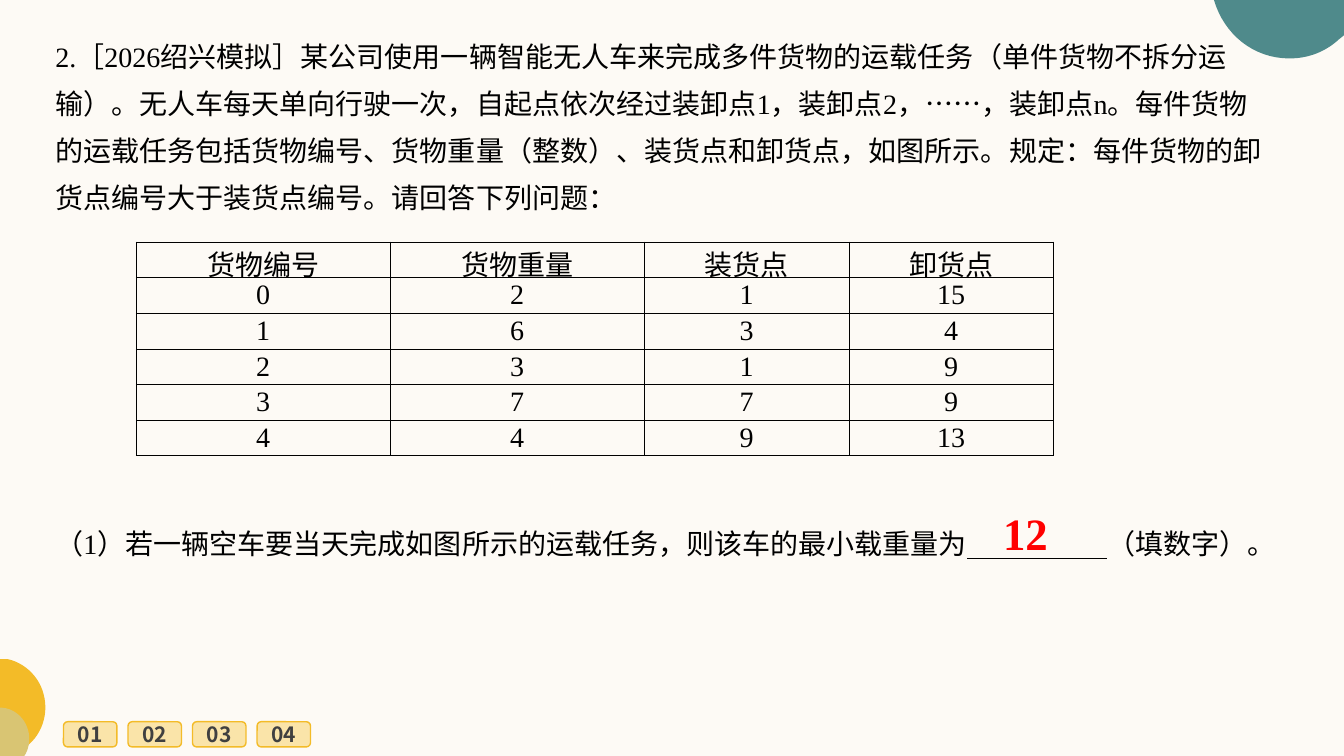
from lxml.etree import SubElement
from pptx import Presentation
from pptx.dml.color import RGBColor
from pptx.enum.shapes import MSO_SHAPE
from pptx.enum.text import MSO_ANCHOR, MSO_AUTO_SIZE, PP_ALIGN
from pptx.oxml.ns import qn
from pptx.util import Inches, Pt

SERIF, SANS = "Times New Roman", "Noto Sans CJK SC"
BLACK, RED, GREY = "000000", "FF0000", "404040"
CREAM, YELLOW, PALE_YELLOW = "FDFAF5", "F3BB28", "FAE4A9"
KHAKI, TEAL = "D9C573", "4F8A8B"
SLIDE_WIDTH, SLIDE_HEIGHT = 13.33, 7.5
INTRODUCTION = (
    "2.［2026绍兴模拟］某公司使用一辆智能无人车来完成多件货物的运载任务（单件货物不拆分运输）。"
    "无人车每天单向行驶一次，自起点依次经过装卸点1，装卸点2，……，装卸点n。"
    "每件货物的运载任务包括货物编号、货物重量（整数）、装货点和卸货点，如图所示。"
    "规定：每件货物的卸货点编号大于装货点编号。请回答下列问题："
)
QUESTION = ("（1）若一辆空车要当天完成如图所示的运载任务，则该车的最小载重量为", "　" * 5, "（填数字）。")
ANSWER = "12"
CARGO = [
    ("货物编号", "货物重量", "装货点", "卸货点"),
    (0, 2, 1, 15),
    (1, 6, 3, 4),
    (2, 3, 1, 9),
    (3, 7, 7, 9),
    (4, 4, 9, 13),
]
COLUMN_WIDTHS = (2.52, 2.52, 2.03, 2.03)
TABLE_HEIGHT = 2.09
PAGE_BUTTONS = ("01", "02", "03", "04")
CORNERS = [
    (YELLOW, [(0.45, 7.02), (0.45, 7.25, 0.29, 7.45, 0.08, 7.49), (0, 7.5), (0, 6.54),
              (0.08, 6.54), (0.29, 6.59, 0.45, 6.78, 0.45, 7.02)]),
    (KHAKI, [(0.29, 7.33), (0.29, 7.16, 0.16, 7.02, 0, 7.02), (0, 7.64),
             (0.16, 7.64, 0.29, 7.5, 0.29, 7.33)]),
    (TEAL, [(12.79, 0.58), (12.98, 0.58, 13.15, 0.51, 13.28, 0.39), (13.33, 0.35),
            (13.33, 0), (12.04, 0), (12.14, 0.34, 12.43, 0.58, 12.79, 0.58)]),
]
CURVE_STEPS = 16


def color(hex_string):
    """Turn a hex string into a colour."""
    return RGBColor.from_string(hex_string)


def paint(fill, hex_string):
    """Give a fill one solid colour."""
    fill.solid()
    fill.fore_color.rgb = color(hex_string)


def format_runs(paragraph, size, name, hex_string, bold=False):
    """Set the font of every run in a paragraph."""
    for run in paragraph.runs:
        run.font.size = Pt(size)
        run.font.name = name
        run.font.bold = bold
        run.font.color.rgb = color(hex_string)


def outline_points(path):
    """Follow straight and cubic segments and return the points passed."""
    points = [path[0]]
    for segment in path[1:]:
        if len(segment) == 2:
            points.append(segment)
            continue
        start = points[-1]
        for step in range(1, CURVE_STEPS + 1):
            t = step / CURVE_STEPS
            weights = ((1 - t) ** 3, 3 * t * (1 - t) ** 2, 3 * t * t * (1 - t), t ** 3)
            points.append(tuple(
                sum(weight * value for weight, value in zip(weights, (start[axis], *segment[axis::2])))
                for axis in (0, 1)))
    return points


def add_corner(slide, hex_string, path):
    """Draw one rounded corner decoration, cut off at the slide's bottom edge."""
    points = [(Inches(x), Inches(min(y, SLIDE_HEIGHT))) for x, y in outline_points(path)]
    builder = slide.shapes.build_freeform(*points[0])
    builder.add_line_segments(points[1:], close=True)
    shape = builder.convert_to_shape()
    shape.shadow.inherit = False
    paint(shape.fill, hex_string)
    shape.line.fill.background()


def add_page_button(slide, index, label):
    """Draw one numbered button of the bottom row."""
    shape = slide.shapes.add_shape(
        MSO_SHAPE.ROUNDED_RECTANGLE, Inches(0.63 + 0.64 * index), Inches(7.16), Inches(0.53), Inches(0.25))
    shape.shadow.inherit = False
    paint(shape.fill, PALE_YELLOW)
    shape.line.color.rgb = color(YELLOW)
    shape.line.width = Pt(1)
    text_frame = shape.text_frame
    text_frame.text = label
    text_frame.vertical_anchor = MSO_ANCHOR.MIDDLE
    text_frame.paragraphs[0].alignment = PP_ALIGN.CENTER
    format_runs(text_frame.paragraphs[0], 15, SANS, GREY, bold=True)


def add_text(slide, box, texts, size=20, hex_string=BLACK, bold=False, spacing=1.4):
    """Add a one-paragraph text box and return its paragraph."""
    text_frame = slide.shapes.add_textbox(*map(Inches, box)).text_frame
    text_frame.word_wrap = True
    text_frame.auto_size = MSO_AUTO_SIZE.SHAPE_TO_FIT_TEXT
    paragraph = text_frame.paragraphs[0]
    paragraph.line_spacing = spacing
    for text in texts:
        paragraph.add_run().text = text
    format_runs(paragraph, size, SERIF, hex_string, bold)
    return paragraph


def set_borders(cell, outer_sides):
    """Line a cell, with a heavier line on the table's outer sides."""
    properties = cell._tc.get_or_add_tcPr()
    for position, side in enumerate("LRTB"):
        width = Pt(0.5 if side in outer_sides else 0.25)
        line = properties.makeelement(qn(f"a:ln{side}"), {"w": str(width)})
        fill = SubElement(line, qn("a:solidFill"))
        SubElement(fill, qn("a:srgbClr"), {"val": BLACK})
        properties.insert(position, line)


def add_cargo_table(slide):
    """Add the table of cargo tasks."""
    row_count, column_count = len(CARGO), len(COLUMN_WIDTHS)
    table = slide.shapes.add_table(
        row_count, column_count, Inches(1.35), Inches(2.4),
        Inches(sum(COLUMN_WIDTHS)), Inches(TABLE_HEIGHT)).table
    table.first_row = table.horz_banding = False
    for column, width in zip(table.columns, COLUMN_WIDTHS):
        column.width = Inches(width)
    for row_index, values in enumerate(CARGO):
        table.rows[row_index].height = Inches(TABLE_HEIGHT / row_count)
        for column_index, value in enumerate(values):
            cell = table.cell(row_index, column_index)
            cell.text = str(value)
            cell.fill.background()
            cell.vertical_anchor = MSO_ANCHOR.MIDDLE
            cell.margin_left = cell.margin_right = Inches(0.01)
            cell.margin_top = cell.margin_bottom = Inches(0.01)
            paragraph = cell.text_frame.paragraphs[0]
            paragraph.alignment = PP_ALIGN.CENTER
            format_runs(paragraph, 20, SERIF, BLACK)
            edges = {"L": column_index == 0, "R": column_index == column_count - 1,
                     "T": row_index == 0, "B": row_index == row_count - 1}
            set_borders(cell, [side for side, is_outer in edges.items() if is_outer])


def main():
    """Build the slide and save it."""
    presentation = Presentation()
    presentation.slide_width = Inches(SLIDE_WIDTH)
    presentation.slide_height = Inches(SLIDE_HEIGHT)
    slide = presentation.slides.add_slide(presentation.slide_layouts[6])
    paint(slide.background.fill, CREAM)
    for hex_string, path in CORNERS:
        add_corner(slide, hex_string, path)
    for index, label in enumerate(PAGE_BUTTONS):
        add_page_button(slide, index, label)
    add_text(slide, (0.45, 0.21, 12.26, 1.98), [INTRODUCTION])
    add_cargo_table(slide)
    question = add_text(slide, (0.45, 5.04, 12.08, 0.57), QUESTION)
    question.runs[1].font.underline = True
    add_text(slide, (9.85, 4.97, 1.23, 0.64), [ANSWER], 32, RED, bold=True, spacing=1.0)
    presentation.save("out.pptx")


if __name__ == "__main__":
    main()
